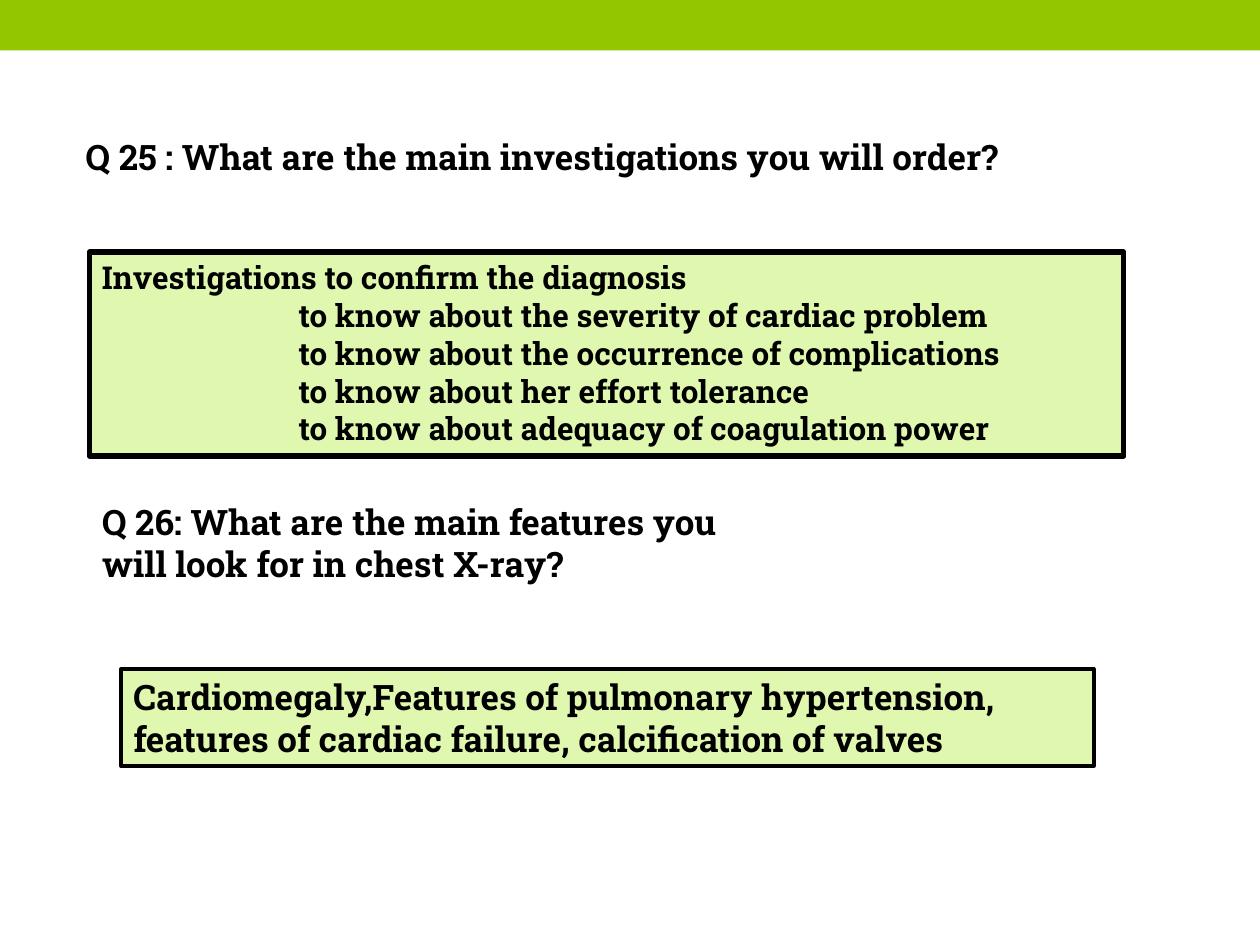
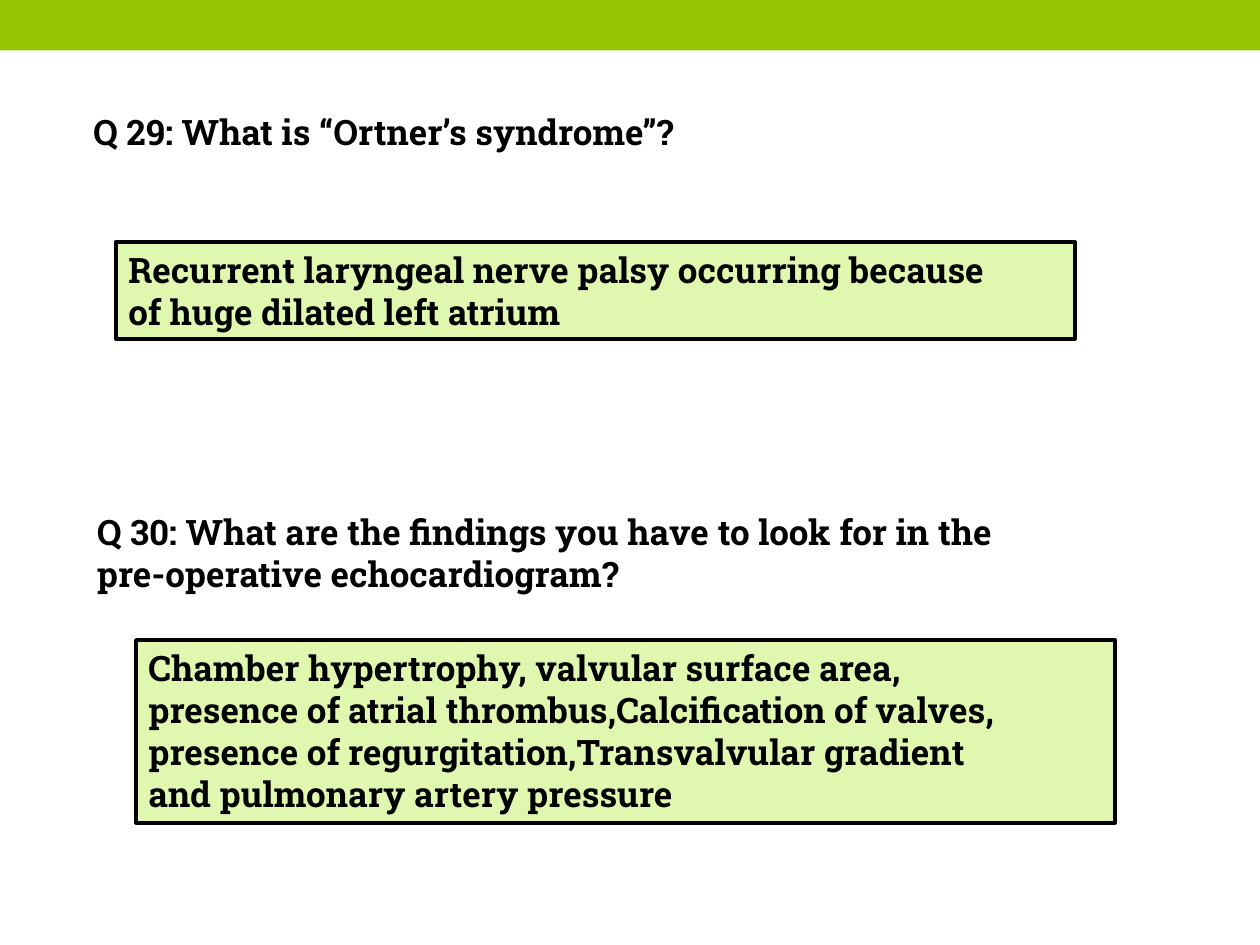
from pptx import Presentation
from pptx.dml.color import RGBColor
from pptx.enum import shapes, text
from pptx.util import Inches, Pt

FONT = "Roboto Slab"
INK, BAND, PALE = "000000", "94C600", "DFF7AE"
INDENT = 1.56  # aligns the follow-on aims under "to confirm"

# Each slide: questions (place, lines) and answers (place, lines, style)
SLIDES = [
    {
        "asks": [
            ((0.71, 3.92, 5.79, 1.11),
             ["Q 26: What are the main features you",
              "will look for in chest X-ray?"]),
            ((0.58, 1.03, 8.34, 0.44),
             ["Q 25 : What are the main investigations you will order?"]),
        ],
        "answers": [
            ((0.71, 2, 8.21, 1.62),
             ["Investigations to confirm the diagnosis",
              "to know about the severity of cardiac problem",
              "to know about the occurrence of complications",
              "to know about her effort tolerance",
              "to know about adequacy of coagulation power"],
             {"size": 18, "edge": 3, "indent": INDENT}),
            ((0.96, 5.31, 7.72, 0.77),
             ["Cardiomegaly,Features of pulmonary hypertension,",
              "features of cardiac failure, calcification of valves"], {}),
        ],
    },
    {
        "asks": [
            ((0.67, 4, 8.33, 0.77),
             ["Q 30: What are the findings you have to look for in the",
              "pre-operative echocardiogram?"]),
            ((0.64, 0.83, 5.49, 0.44),
             ["Q 29: What is “Ortner’s syndrome”?"]),
        ],
        "answers": [
            ((0.92, 1.92, 7.61, 0.77),
             ["Recurrent laryngeal nerve palsy occurring because",
              "of huge dilated left atrium"], {}),
            ((1.08, 5.08, 7.77, 1.45),
             ["Chamber hypertrophy, valvular surface area,",
              "presence of atrial thrombus,Calcification of valves,",
              "presence of regurgitation,Transvalvular gradient",
              "and pulmonary artery pressure"], {}),
        ],
    },
]


def color(code):
    return RGBColor.from_string(code)


def add_rect(slide, place, fill, edge=0):
    rect = slide.shapes.add_shape(
        shapes.MSO_SHAPE.RECTANGLE, *map(Inches, place))
    rect.shadow.inherit = False
    rect.fill.solid()
    rect.fill.fore_color.rgb = color(fill)
    if edge:
        rect.line.color.rgb = color(INK)
        rect.line.width = Pt(edge)
    else:
        rect.line.fill.background()
    return rect


def write(shape, lines, size=20, indent=0):
    """Fill a shape with bold lines; lines after the first may be indented."""
    frame = shape.text_frame
    frame.word_wrap = True
    frame.vertical_anchor = text.MSO_ANCHOR.TOP
    frame.text = "\n".join(lines)
    for i, para in enumerate(frame.paragraphs):
        para.alignment = text.PP_ALIGN.LEFT
        font = para.font
        font.name, font.size, font.bold = FONT, Pt(size), True
        font.color.rgb = color(INK)
        if indent and i:
            para._p.get_or_add_pPr().set("marL", str(Inches(indent)))


def add_ask(slide, place, lines):
    write(slide.shapes.add_textbox(*map(Inches, place)), lines)


def add_answer(slide, place, lines, size=20, edge=2.25, indent=0):
    write(add_rect(slide, place, PALE, edge), lines, size, indent)


def main():
    deck = Presentation()
    deck.slide_width, deck.slide_height = Inches(10), Inches(7.5)
    for page in SLIDES:
        slide = deck.slides.add_slide(deck.slide_layouts[6])
        add_rect(slide, (0, 0, 10, 0.4), BAND)  # top band
        for place, lines in page["asks"]:
            add_ask(slide, place, lines)
        for place, lines, style in page["answers"]:
            add_answer(slide, place, lines, **style)
    deck.save("out.pptx")


if __name__ == "__main__":
    main()
